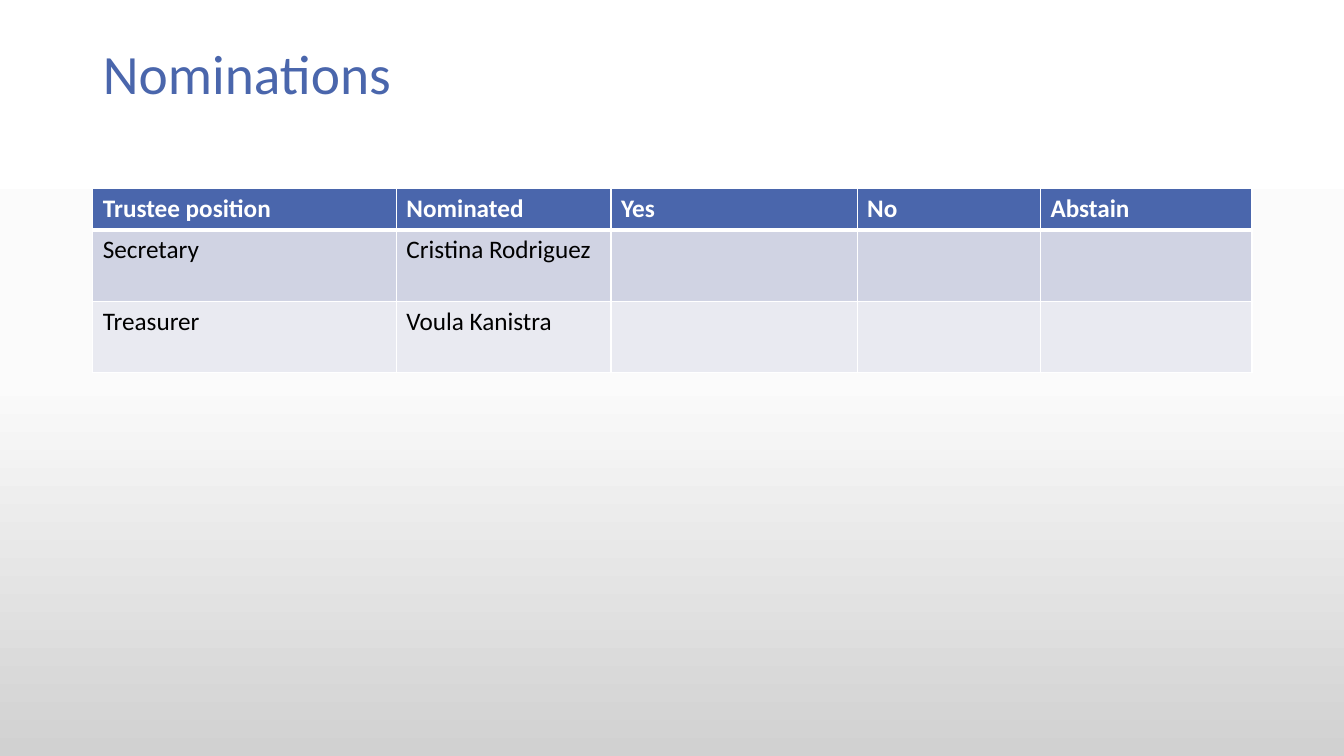
from dataclasses import dataclass

from lxml import etree
from pptx import Presentation
from pptx import util as u
from pptx.dml.color import RGBColor
from pptx.enum import text
from pptx.oxml.ns import qn


@dataclass(frozen=True)
class Theme:
    font: str = "Calibri"
    blue: str = "4A66AC"
    white: str = "FFFFFF"
    black: str = "000000"
    bands: tuple = ("D0D3E3", "E9EAF1")
    back: tuple = ((0, "FFFFFF"), (50, "FBFBFB"), (100, "D1D1D1"))
    title: float = 39.6
    body: float = 18
    thin: float = 1
    thick: float = 3


THEME = Theme()
LEFT, WIDTH = u.Cm(2.34), u.Cm(29.21)
COLS = (7.65, 5.41, 6.2, 4.62, 5.33)
HEAD, BODY = 1.04, 1.8
ROWS = (
    ("Trustee position", "Nominated", "Yes", "No", "Abstain"),
    ("Secretary", "Cristina Rodriguez", "", "", ""),
    ("Treasurer", "Voula Kanistra", "", "", ""),
)


def add_run(para, words, size, color, bold=False):
    run = para.add_run()
    run.text = words
    font = run.font
    font.name, font.size, font.bold = THEME.font, u.Pt(size), bold
    font.color.rgb = RGBColor.from_string(color)


def add_color(parent, color):
    etree.SubElement(parent, qn("a:srgbClr"), val=color)


def set_back(slide):
    fill = slide.background.fill
    fill.gradient()
    fill.gradient_angle = 270
    stops = next(slide.element.iter(qn("a:gsLst")))
    for stop in list(stops):
        stops.remove(stop)
    for place, color in THEME.back:
        add_color(etree.SubElement(stops, qn("a:gs"), pos=str(place * 1000)), color)


def set_title(slide, words):
    title = slide.shapes.title
    title.left, title.top, title.width, title.height = LEFT, u.Cm(1.02), WIDTH, u.Cm(1.83)
    frame = title.text_frame
    frame.auto_size = text.MSO_AUTO_SIZE.NONE
    frame.vertical_anchor = text.MSO_ANCHOR.MIDDLE
    para = frame.paragraphs[0]
    para.alignment = text.PP_ALIGN.LEFT
    para.line_spacing = 0.9
    add_run(para, words, THEME.title, THEME.blue)


def set_edges(cell, top, base):
    """Draw the cell's white borders; call it before the fill is set."""
    props = cell._tc.get_or_add_tcPr()
    for side, width in zip("LRTB", (THEME.thin, THEME.thin, top, base)):
        line = etree.SubElement(props, qn(f"a:ln{side}"), w=str(u.Pt(width)))
        add_color(etree.SubElement(line, qn("a:solidFill")), THEME.white)


def set_cell(cell, words, row):
    head = row == 0
    top = THEME.thick if row == 1 else THEME.thin
    set_edges(cell, top, THEME.thick if head else THEME.thin)
    cell.fill.solid()
    fill = THEME.blue if head else THEME.bands[(row - 1) % 2]
    cell.fill.fore_color.rgb = RGBColor.from_string(fill)
    if words:
        color = THEME.white if head else THEME.black
        add_run(cell.text_frame.paragraphs[0], words, THEME.body, color, head)


def add_grid(slide, rows):
    high = u.Cm(HEAD + BODY * (len(rows) - 1))
    frame = slide.shapes.add_table(len(rows), len(COLS), LEFT, u.Cm(4.75), WIDTH, high)
    table = frame.table
    for col, width in zip(table.columns, COLS):
        col.width = u.Cm(width)
    for r, names in enumerate(rows):
        table.rows[r].height = u.Cm(BODY if r else HEAD)
        for c, words in enumerate(names):
            set_cell(table.cell(r, c), words, r)


def main():
    deck = Presentation()
    deck.slide_width, deck.slide_height = u.Cm(33.87), u.Cm(19.05)
    slide = deck.slides.add_slide(deck.slide_layouts.get_by_name("Title Only"))
    set_back(slide)
    set_title(slide, "Nominations")
    add_grid(slide, ROWS)
    deck.save("out.pptx")


if __name__ == "__main__":
    main()
